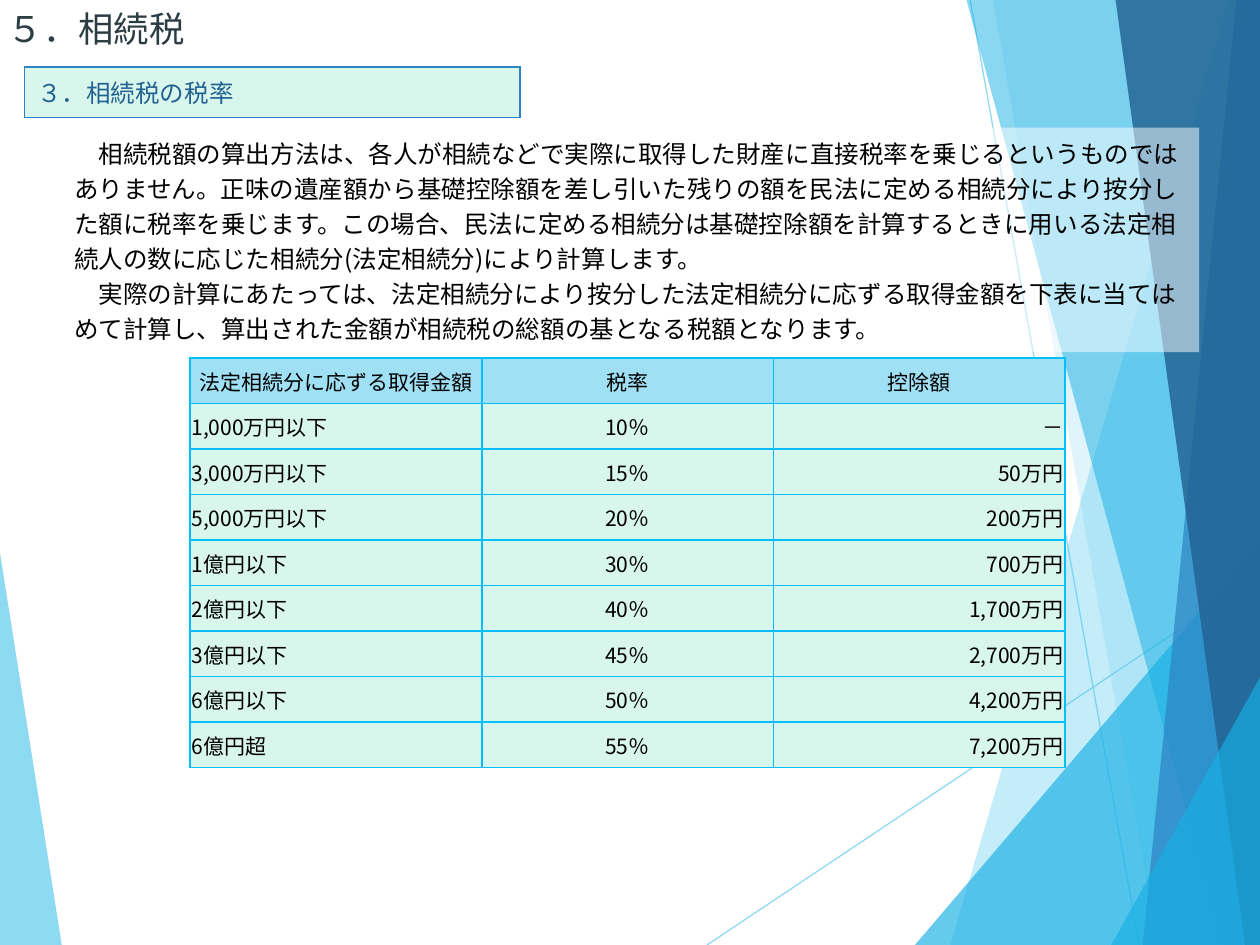
from lxml.etree import SubElement
from pptx import Presentation
from pptx.dml.color import RGBColor
from pptx.enum.shapes import MSO_CONNECTOR as Connector, MSO_SHAPE as Shape
from pptx.enum.text import MSO_ANCHOR as Anchor, PP_ALIGN as Align
from pptx.oxml import parse_xml
from pptx.oxml.ns import nsdecls, qn
from pptx.util import Pt

FONT = "Noto Sans CJK JP"
BLACK = RGBColor(0x00, 0x00, 0x00)
WHITE = RGBColor(0xFF, 0xFF, 0xFF)
SLATE = RGBColor(0x2C, 0x3C, 0x43)
SKY = RGBColor(0x5F, 0xCB, 0xEF)
CYAN = RGBColor(0x17, 0xB0, 0xE4)
BLUE = RGBColor(0x2E, 0x83, 0xC3)
NAVY = RGBColor(0x22, 0x62, 0x92)
BRIGHT = RGBColor(0x05, 0xBE, 0xFF)
PALE_BLUE = RGBColor(0x9F, 0xE0, 0xF5)
MINT = RGBColor(0xD9, 0xF6, 0xEC)

LEFT_FACET = ([(0, 316), (35.3, 540), (0, 540)], SKY, 70)
RIGHT_FACETS = [
    ([(702, 0), (543, 540), (720, 540), (720, 0)], SKY, 36),
    ([(567.5, 0), (661.5, 540), (720, 540), (720, 0)], SKY, 20),
    ([(522.8, 540), (720, 309), (720, 540)], CYAN, 66),
    ([(552.3, 0), (698.5, 540), (720, 540), (720, 0)], CYAN, 50),
    ([(706.5, 0), (653, 540), (720, 540), (720, 0)], BLUE, 70),
    ([(637.5, 0), (711.5, 540), (720, 540), (720, 0)], NAVY, 82),
    ([(635, 540), (720, 387), (720, 540)], CYAN, 66),
]
RAYS = [((404, 540), (720, 329)), ((554.4, 0), (651, 540))]

EXPLANATION = [
    "　相続税額の算出方法は、各人が相続などで実際に取得した財産に直接税率を乗じるというものではありません。"
    "正味の遺産額から基礎控除額を差し引いた残りの額を民法に定める相続分により按分した額に税率を乗じます。"
    "この場合、民法に定める相続分は基礎控除額を計算するときに用いる法定相続人の数に応じた相続分"
    "(法定相続分)により計算します。",
    "　実際の計算にあたっては、法定相続分により按分した法定相続分に応ずる取得金額を下表に当てはめて計算し、"
    "算出された金額が相続税の総額の基となる税額となります。",
]
TAX_RATES = [
    ("法定相続分に応ずる取得金額", "税率", "控除額"),
    ("1,000万円以下", "10％", "－"),
    ("3,000万円以下", "15％", "50万円"),
    ("5,000万円以下", "20％", "200万円"),
    ("1億円以下", "30％", "700万円"),
    ("2億円以下", "40％", "1,700万円"),
    ("3億円以下", "45％", "2,700万円"),
    ("6億円以下", "50％", "4,200万円"),
    ("6億円超", "55％", "7,200万円"),
]


def set_alpha(fill_format, percent):
    color = fill_format._xPr.find(".//" + qn("a:srgbClr"))
    SubElement(color, qn("a:alpha")).set("val", str(percent * 1000))


def add_span(para, text, size, color):
    span = para.add_run()
    span.text = text
    span.font.size = Pt(size)
    span.font.name = FONT
    span.font.color.rgb = color
    SubElement(span.font._element, qn("a:ea")).set("typeface", FONT)


def paint(shape, color, alpha):
    shape.shadow.inherit = False
    shape.fill.solid()
    shape.fill.fore_color.rgb = color
    set_alpha(shape.fill, alpha)
    shape.line.fill.background()


def add_facet(page, points, color, alpha):
    start, *rest = [(Pt(x), Pt(y)) for x, y in points]
    builder = page.shapes.build_freeform(*start)
    builder.add_line_segments(rest, close=True)
    paint(builder.convert_to_shape(), color, alpha)


def add_ray(page, start, end):
    ray = page.shapes.add_connector(Connector.STRAIGHT, *map(Pt, start + end))
    ray.line.width = Pt(0.75)
    ray.line.color.rgb = SKY
    set_alpha(ray.line.fill, 70)
    SubElement(ray._element.spPr, qn("a:effectLst"))


def add_title(page, text):
    title = page.shapes.title
    title.left, title.top, title.width, title.height = Pt(0), Pt(0), Pt(288), Pt(32.4)
    frame = title.text_frame
    frame.margin_left = frame.margin_right = frame.margin_top = frame.margin_bottom = 0
    frame.vertical_anchor = Anchor.MIDDLE
    para = frame.paragraphs[0]
    para.alignment = Align.LEFT
    add_span(para, text, 20.2, SLATE)


def add_explanation(page):
    box = page.shapes.add_shape(Shape.RECTANGLE, Pt(35.3), Pt(72.9), Pt(650), Pt(128.3))
    paint(box, WHITE, 50)
    frame = box.text_frame
    frame.word_wrap = True
    frame.vertical_anchor = Anchor.TOP
    for index, text in enumerate(EXPLANATION):
        para = frame.add_paragraph() if index else frame.paragraphs[0]
        para.alignment = Align.LEFT
        para.line_spacing = Pt(20)
        add_span(para, text, 14, BLACK)


def set_borders(cell, color):
    properties = cell._tc.get_or_add_tcPr()
    for index, side in enumerate(("lnL", "lnR", "lnT", "lnB")):
        properties.insert(index, parse_xml(
            f'<a:{side} {nsdecls("a")} w="{Pt(1)}"><a:solidFill>'
            f'<a:srgbClr val="{color}"/></a:solidFill></a:{side}>'))


def add_grid(page, left, top, width, height, rows, cols):
    grid = page.shapes.add_table(rows, cols, Pt(left), Pt(top), Pt(width), Pt(height)).table
    grid.first_row = grid.horz_banding = False
    return grid


def fill_cell(cell, text, size, color, fill, border, align):
    cell.vertical_anchor = Anchor.MIDDLE
    cell.fill.solid()
    cell.fill.fore_color.rgb = fill
    set_borders(cell, border)
    para = cell.text_frame.paragraphs[0]
    para.alignment = align
    add_span(para, text, size, color)


def add_heading(page, text):
    grid = add_grid(page, 14.1, 38.3, 283, 28.8, 1, 1)
    fill_cell(grid.cell(0, 0), text, 14, NAVY, MINT, BLUE, Align.LEFT)


def add_rate_table(page):
    grid = add_grid(page, 108.7, 204.7, 499.8, 201.6, len(TAX_RATES), len(TAX_RATES[0]))
    aligns = (Align.LEFT, Align.CENTER, Align.RIGHT)
    for row, texts in enumerate(TAX_RATES):
        for col, text in enumerate(texts):
            cell = grid.cell(row, col)
            cell.margin_left = cell.margin_right = Pt(0.75)
            cell.margin_top = cell.margin_bottom = Pt(4.3)
            align = aligns[col] if row else Align.CENTER
            fill_cell(cell, text, 12, BLACK, MINT if row else PALE_BLUE, BRIGHT, align)


def main():
    deck = Presentation()
    deck.slide_width, deck.slide_height = Pt(720), Pt(540)
    page = deck.slides.add_slide(deck.slide_layouts[5])
    add_facet(page, *LEFT_FACET)
    for ray in RAYS:
        add_ray(page, *ray)
    for facet in RIGHT_FACETS:
        add_facet(page, *facet)
    add_title(page, " ５．相続税")
    add_heading(page, "３．相続税の税率")
    add_explanation(page)
    add_rate_table(page)
    deck.save("out.pptx")


if __name__ == "__main__":
    main()
